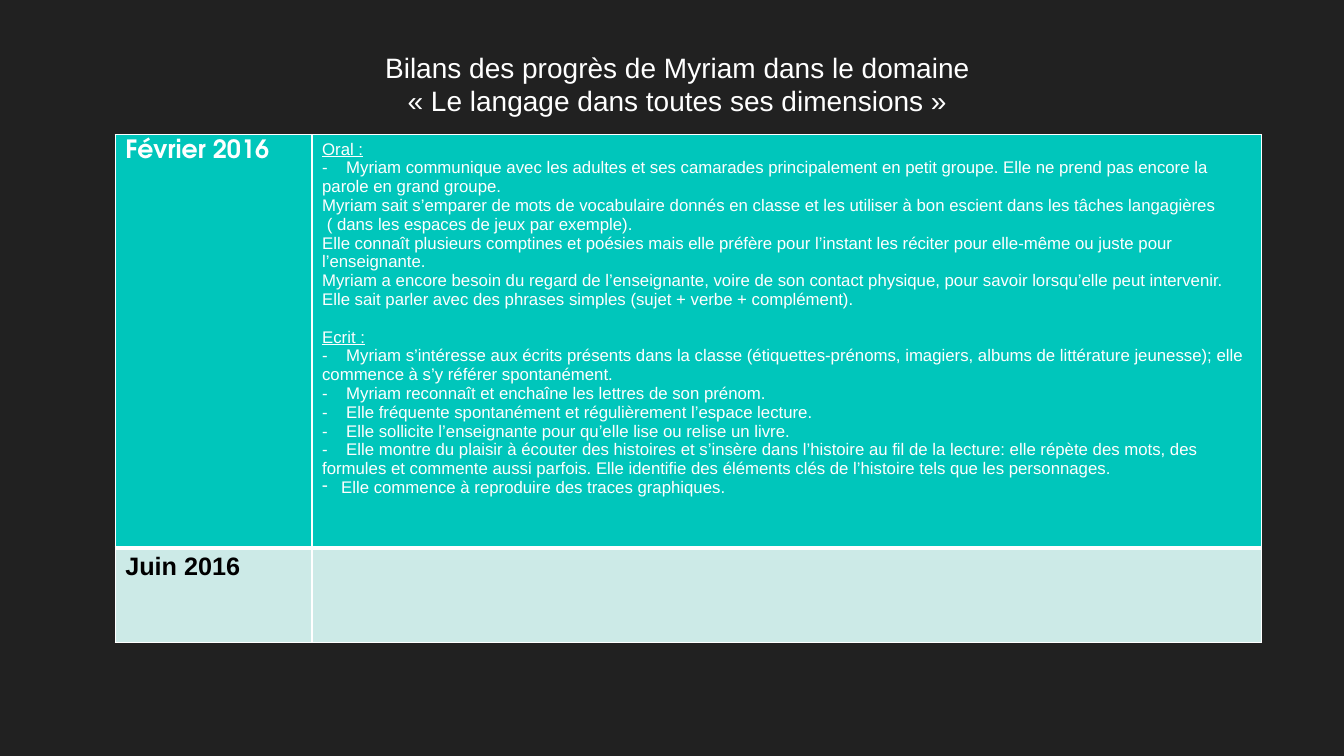
from dataclasses import dataclass

import lxml.etree
import pptx
import pptx.dml.color
import pptx.enum.text
import pptx.oxml.ns
import pptx.util

Pt = pptx.util.Pt
qn = pptx.oxml.ns.qn

BACKGROUND = "212121"
WHITE = "FFFFFF"
BLACK = "000000"
TURQUOISE = "00C6BB"
PALE_TURQUOISE = "CCEAE7"
DASH_TAB = 17.2
BULLET_INDENT = 13.6
LINE_GAP = 13.4


@dataclass(frozen=True)
class Style:
    size: float
    color: str
    font: str = "Arial"
    bold: bool = False
    underline: bool = False


@dataclass(frozen=True)
class Line:
    text: str
    style: Style
    space_before: float = 0
    centered: bool = False
    dashed: bool = False
    bulleted: bool = False


@dataclass(frozen=True)
class Period:
    label: Line
    notes: tuple[Line, ...]
    fill: str
    height: float
    top_border: float
    bottom_border: float


TITLE = Style(20, WHITE)
BODY = Style(12, WHITE)
HEADING = Style(12, WHITE, underline=True)

TITLE_LINES = (
    Line("Bilans des progrès de Myriam dans le domaine", TITLE, centered=True),
    Line("« Le langage dans toutes ses dimensions »", TITLE, centered=True),
)

FEBRUARY_NOTES = (
    Line("Oral :", HEADING),
    Line("Myriam communique avec les adultes et ses camarades principalement en petit groupe. "
         "Elle ne prend pas encore la parole en grand groupe.", BODY, dashed=True),
    Line("Myriam sait s’emparer de mots de vocabulaire donnés en classe et les utiliser "
         "à bon escient dans les tâches langagières", BODY),
    Line(" ( dans les espaces de jeux par exemple).", BODY),
    Line("Elle connaît plusieurs comptines et poésies mais elle préfère pour l’instant "
         "les réciter pour elle-même ou juste pour l’enseignante.", BODY),
    Line("Myriam a encore besoin du regard de l’enseignante, voire de son contact physique, "
         "pour savoir lorsqu’elle peut intervenir.", BODY),
    Line("Elle sait parler avec des phrases simples (sujet + verbe + complément).", BODY),
    Line("Ecrit :", HEADING, space_before=LINE_GAP),
    Line("Myriam s’intéresse aux écrits présents dans la classe (étiquettes-prénoms, imagiers, "
         "albums de littérature jeunesse); elle commence à s’y référer spontanément.",
         BODY, dashed=True),
    Line("Myriam reconnaît et enchaîne les lettres de son prénom.", BODY, dashed=True),
    Line("Elle fréquente spontanément et régulièrement l’espace lecture.", BODY, dashed=True),
    Line("Elle sollicite l’enseignante pour qu’elle lise ou relise un livre.", BODY, dashed=True),
    Line("Elle montre du plaisir à écouter des histoires et s’insère dans l’histoire au fil "
         "de la lecture: elle répète des mots, des formules et commente aussi parfois. "
         "Elle identifie des éléments clés de l’histoire tels que les personnages.",
         BODY, dashed=True),
    Line("Elle commence à reproduire des traces graphiques.", BODY, bulleted=True),
)

COLUMN_WIDTHS = (140.6, 678.4)
PERIODS = (
    Period(Line("Février 2016", Style(18, WHITE, "TeX Gyre Adventor", bold=True)),
           FEBRUARY_NOTES, TURQUOISE, 295.2, 1, 3),
    Period(Line("Juin 2016", Style(18, BLACK, bold=True)),
           (), PALE_TURQUOISE, 67.6, 3, 1),
)


def rgb(color: str) -> pptx.dml.color.RGBColor:
    return pptx.dml.color.RGBColor.from_string(color)


def write_lines(text_frame, lines: tuple[Line, ...]) -> None:
    for index, line in enumerate(lines):
        paragraph = text_frame.add_paragraph() if index else text_frame.paragraphs[0]
        if line.centered:
            paragraph.alignment = pptx.enum.text.PP_ALIGN.CENTER
        if line.space_before:
            paragraph.space_before = Pt(line.space_before)
        properties = paragraph._p.get_or_add_pPr()
        if line.dashed:
            tabs = lxml.etree.SubElement(properties, qn("a:tabLst"))
            lxml.etree.SubElement(tabs, qn("a:tab"), pos=str(Pt(DASH_TAB)), algn="l")
        if line.bulleted:
            properties.set("marL", str(Pt(BULLET_INDENT)))
            properties.set("indent", str(-Pt(BULLET_INDENT)))
            lxml.etree.SubElement(properties, qn("a:buChar"), char="-")
        run = paragraph.add_run()
        run.text = f"-\t{line.text}" if line.dashed else line.text
        run.font.name = line.style.font
        run.font.size = Pt(line.style.size)
        run.font.bold = line.style.bold
        run.font.underline = line.style.underline
        run.font.color.rgb = rgb(line.style.color)


def format_cell(cell, period: Period) -> None:
    properties = cell._tc.get_or_add_tcPr()
    borders = {"lnL": 1, "lnR": 1, "lnT": period.top_border, "lnB": period.bottom_border}
    for side, width in borders.items():
        border = lxml.etree.SubElement(properties, qn(f"a:{side}"), w=str(Pt(width)))
        fill = lxml.etree.SubElement(border, qn("a:solidFill"))
        lxml.etree.SubElement(fill, qn("a:srgbClr"), val=WHITE)
    cell.fill.solid()
    cell.fill.fore_color.rgb = rgb(period.fill)


def add_title(slide) -> None:
    title = slide.shapes.add_textbox(Pt(85), Pt(32.4), Pt(797.8), Pt(55.4))
    title.text_frame.word_wrap = True
    title.text_frame.auto_size = pptx.enum.text.MSO_AUTO_SIZE.SHAPE_TO_FIT_TEXT
    write_lines(title.text_frame, TITLE_LINES)


def add_progress_table(slide) -> None:
    height = sum(period.height for period in PERIODS)
    frame = slide.shapes.add_table(len(PERIODS), len(COLUMN_WIDTHS), Pt(82.3), Pt(96.2),
                                   Pt(sum(COLUMN_WIDTHS)), Pt(height))
    table = frame.table
    table.first_row = False
    table.horz_banding = False
    for column, width in zip(table.columns, COLUMN_WIDTHS):
        column.width = Pt(width)
    for row, period in zip(table.rows, PERIODS):
        row.height = Pt(period.height)
        for cell, lines in zip(row.cells, ((period.label,), period.notes)):
            format_cell(cell, period)
            write_lines(cell.text_frame, lines)


def main() -> None:
    presentation = pptx.Presentation()
    presentation.slide_width = Pt(960)
    presentation.slide_height = Pt(540)
    slide = presentation.slides.add_slide(presentation.slide_layouts[6])
    slide.background.fill.solid()
    slide.background.fill.fore_color.rgb = rgb(BACKGROUND)
    add_title(slide)
    add_progress_table(slide)
    presentation.save("out.pptx")


if __name__ == "__main__":
    main()
